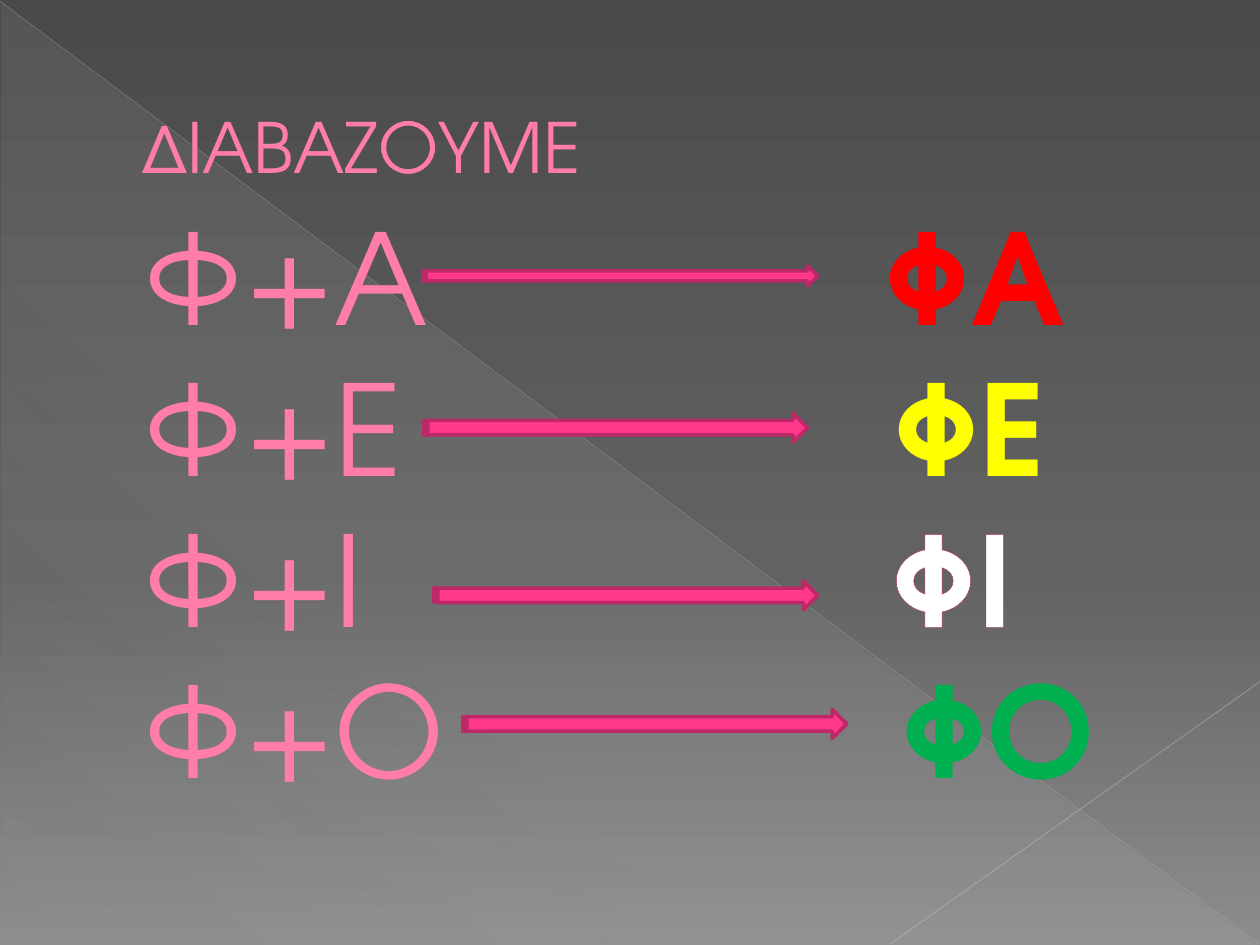
from lxml import etree
from pptx import Presentation
from pptx.dml.color import RGBColor
from pptx.enum.shapes import MSO_CONNECTOR as CONNECTOR, MSO_SHAPE as SHAPE
from pptx.enum.text import MSO_ANCHOR as ANCHOR
from pptx.oxml import parse_xml
from pptx.oxml.ns import nsdecls, qn
from pptx.util import Inches, Pt

COLORS = {
    "pink": "FF7DA7", "text edge": "B12761",
    "arrow": "FF388C", "arrow edge": "BD2968",
    "red": "FF0000", "yellow": "FFFF00", "white": "FFFFFF", "green": "00B050",
    "dark": "4A4A4A", "middle": "626262", "light": "8C8C8C",
    "veil": "D2D2D2", "long line": "BFBFBF", "short line": "C6C6C6",
}
FONT = "TeX Gyre Adventor"

# First part, syllable, syllable colour, tab position
SYLLABLES = [
    ("Φ+Α", "ΦΑ", "red", 5.88),
    ("Φ+Ε", "ΦΕ", "yellow", 5.95),
    ("Φ+Ι", "ΦΙ", "white", 5.93),
    ("Φ+Ο", "ΦΟ", "green", 6.02),
]
# Left, top, width, height
ARROWS = [
    (3.36, 2.11, 3.13, 0.16),
    (3.36, 3.28, 3.05, 0.23),
    (3.44, 4.61, 3.05, 0.23),
    (3.67, 5.63, 3.05, 0.23),
]


def rgb(name):
    return RGBColor.from_string(COLORS[name])


def gradient_xml(stops, angle):
    """Gradient from (position %, colour name, opacity %) stops."""
    marks = "".join(
        f'<a:gs pos="{position * 1000}"><a:srgbClr val="{COLORS[name]}">'
        f'<a:alpha val="{opacity * 1000}"/></a:srgbClr></a:gs>'
        for position, name, opacity in stops)
    return parse_xml(
        f'<a:gradFill {nsdecls("a")} rotWithShape="1"><a:gsLst>{marks}</a:gsLst>'
        f'<a:lin ang="{angle * 60000}" scaled="0"/></a:gradFill>')


def swap_fill(properties, gradient):
    properties.replace(properties.find(qn("a:solidFill")), gradient)


def add_line(slide, start, end, color, width, opacity):
    line = slide.shapes.add_connector(
        CONNECTOR.STRAIGHT, *(Inches(value) for value in start + end))
    line.line.color.rgb = rgb(color)
    line.line.width = Pt(width)
    properties = line._element.spPr
    tone = properties.find(".//" + qn("a:srgbClr"))
    etree.SubElement(tone, qn("a:alpha")).set("val", str(opacity * 1000))
    etree.SubElement(properties, qn("a:effectLst"))


def add_backdrop(slide, left, top, width, height):
    # Page gradient
    fill = slide.background.fill
    fill.solid()
    fill.fore_color.rgb = rgb("dark")
    swap_fill(slide._element.cSld.find(".//" + qn("p:bgPr")), gradient_xml(
        [(0, "dark", 100), (60, "middle", 100), (100, "light", 100)], 90))

    # Pale corner triangle
    triangle = slide.shapes.add_shape(
        SHAPE.RIGHT_TRIANGLE, Inches(left + 0.01), Inches(top + 0.02),
        Inches(width - 0.02), Inches(height - 0.02))
    triangle.shadow.inherit = False
    triangle.line.fill.background()
    triangle.fill.solid()
    swap_fill(triangle._element.spPr, gradient_xml(
        [(0, "veil", 10), (70, "veil", 8), (100, "veil", 1)], 133))

    # Diagonal hairlines
    right, bottom = left + width, top + height - 0.01
    add_line(slide, (left, top + 0.01), (right - 0.01, bottom), "long line", 0.39, 35)
    add_line(slide, (right, top + 5.41), (left + 7.07, bottom), "short line", 0.47, 45)


def add_run(paragraph, text, size, color, bold=False):
    run = paragraph.add_run()
    run.text = text
    run.font.name = FONT
    run.font.size = Pt(size)
    run.font.bold = bold
    run.font.color.rgb = rgb(color)
    run._r.get_or_add_rPr().insert(0, parse_xml(
        f'<a:ln {nsdecls("a")} w="{Pt(0.5)}"><a:solidFill>'
        f'<a:srgbClr val="{COLORS["text edge"]}"/></a:solidFill></a:ln>'))


def add_reading_text(slide, left, top, width, height):
    box = slide.shapes.add_textbox(
        Inches(left), Inches(top), Inches(width), Inches(height))
    frame = box.text_frame
    frame.word_wrap = True
    frame.vertical_anchor = ANCHOR.TOP
    frame.margin_left = Inches(0.63)
    frame.margin_top = frame.margin_bottom = 0

    heading = frame.paragraphs[0]
    heading.space_after = Pt(6.5)
    add_run(heading, "ΔΙΑΒΑΖΟΥΜΕ", 39.6, "pink")

    for parts, syllable, color, tab in SYLLABLES:
        paragraph = frame.add_paragraph()
        tabs = etree.SubElement(paragraph._p.get_or_add_pPr(), qn("a:tabLst"))
        etree.SubElement(tabs, qn("a:tab"), pos=str(Inches(tab)), algn="l")
        add_run(paragraph, parts + "\t", 72, "pink")
        add_run(paragraph, syllable, 72, color, bold=True)


def add_arrow(slide, left, top, width, height):
    arrow = slide.shapes.add_shape(
        SHAPE.STRIPED_RIGHT_ARROW, Inches(left), Inches(top),
        Inches(width), Inches(height))
    arrow.shadow.inherit = False
    arrow.fill.solid()
    arrow.fill.fore_color.rgb = rgb("arrow")
    arrow.line.color.rgb = rgb("arrow edge")
    arrow.line.width = Pt(2)


def main():
    presentation = Presentation()
    presentation.slide_width = Inches(10)
    presentation.slide_height = Inches(7.5)
    slide = presentation.slides.add_slide(presentation.slide_layouts[6])
    add_backdrop(slide, 0, 0, 10, 7.5)
    add_reading_text(slide, 0.5, 0.83, 9, 6.25)
    for box in ARROWS:
        add_arrow(slide, *box)
    presentation.save("out.pptx")


if __name__ == "__main__":
    main()
